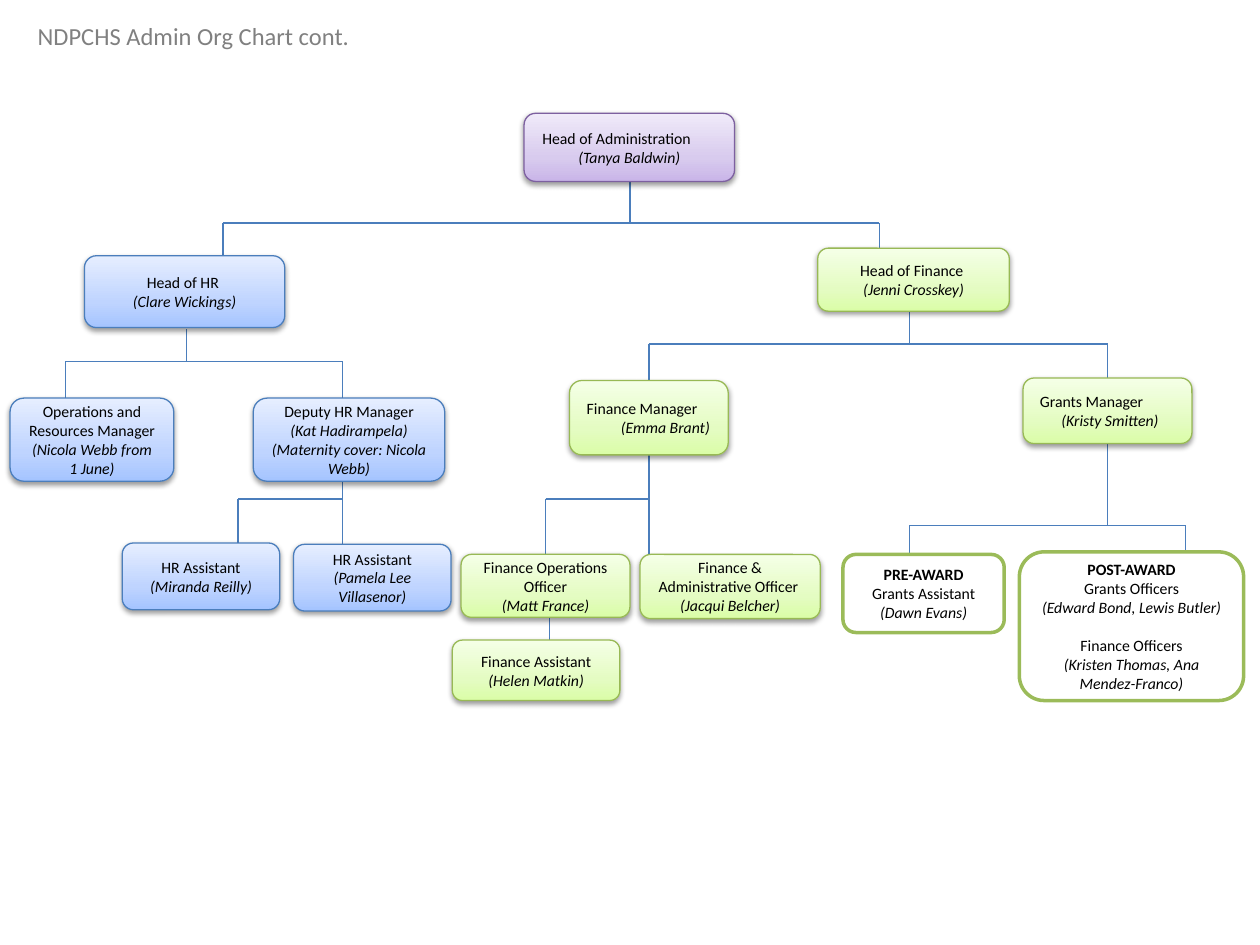
from copy import deepcopy
from pptx import Presentation
from pptx.dml.color import RGBColor
from pptx.enum.shapes import MSO_CONNECTOR, MSO_SHAPE
from pptx.enum.text import MSO_ANCHOR, PP_ALIGN
from pptx.oxml import parse_xml
from pptx.oxml.ns import nsdecls, qn
from pptx.util import Inches, Pt

TONES = {
    "purple": ("7D60A0", ("F0EAF9", "D8CBEE", "C9B5E8")),
    "blue": ("4B7EBC", ("E6EEFF", "BFD4FF", "A4C4FF")),
    "green": ("98B955", ("F5FFE7", "E4FCC2", "DAFDA7")),
}
WIRE = "4B7EBC"
SHADOW = (
    f'<a:effectLst {nsdecls("a")}><a:outerShdw blurRad="{Pt(3.1)}" dist="{Pt(1.6)}" '
    'dir="5400000" rotWithShape="0"><a:srgbClr val="000000"><a:alpha val="38000"/>'
    "</a:srgbClr></a:outerShdw></a:effectLst>"
)


def paint(code):
    """Turn a hex string into a colour."""
    return RGBColor.from_string(code)


def wire(slide, x1, y1, x2, y2):
    """Draw one thin line."""
    ends = [Inches(v) for v in (x1, y1, x2, y2)]
    line = slide.shapes.add_connector(MSO_CONNECTOR.STRAIGHT, *ends)
    line.line.color.rgb = paint(WIRE)
    line.line.width = Pt(0.75)
    line._element.spPr.append(parse_xml(f'<a:effectLst {nsdecls("a")}/>'))


def rail(slide, left, top, level, ends):
    """Draw a level rail with a vertical line to each end."""
    spots = [left + x for x, _ in ends]
    y = top + level
    if len(spots) > 1:
        wire(slide, min(spots), y, max(spots), y)
    for x, end in zip(spots, ends):
        wire(slide, x, y, x, top + end[1])


def shade(shape, codes):
    """Fill a shape from top to bottom with three colours and add a shadow."""
    shape.fill.gradient()
    shape.fill.gradient_angle = 270
    stops = shape._element.spPr.find(qn("a:gradFill")).find(qn("a:gsLst"))
    stops.append(deepcopy(stops[-1]))
    for stop, code, place in zip(shape.fill.gradient_stops, codes, (0, 0.65, 1)):
        stop.color.rgb = paint(code)
        stop.position = place


def card(slide, box, tone, lines, dents=(), gaps=None):
    """Place a rounded card with its job title and names."""
    shape = slide.shapes.add_shape(MSO_SHAPE.ROUNDED_RECTANGLE, *map(Inches, box))
    shape.shadow.inherit = False
    if tone in TONES:
        edge, codes = TONES[tone]
        shade(shape, codes)
        shape.line.width = Pt(0.75)
        props = shape._element.spPr
        props.replace(props.find(qn("a:effectLst")), parse_xml(SHADOW))
    else:
        edge = "9BBB59"
        shape.fill.solid()
        shape.fill.fore_color.rgb = paint("FFFFFF")
        shape.line.width = Pt(2)
    shape.line.color.rgb = paint(edge)
    frame = shape.text_frame
    frame.word_wrap = True
    frame.vertical_anchor = MSO_ANCHOR.MIDDLE
    for i, text in enumerate(lines):
        para = frame.paragraphs[0] if i == 0 else frame.add_paragraph()
        para.text = text
        para.alignment = PP_ALIGN.CENTER
        if i < len(dents):
            para.alignment = PP_ALIGN.LEFT
            para._p.get_or_add_pPr().set("marL", str(Inches(dents[i])))
        if gaps and i in gaps:
            para.space_before = Pt(gaps[i])
        font = para.font
        font.name, font.size = "Calibri", Pt(9)
        font.color.rgb = paint("000000")
        font.bold = text.isupper()
        font.italic = text.startswith("(")


def team(slide, left, top, tone, rails, cards):
    """Place one team's rails, then its cards, from a corner."""
    for level, ends in rails:
        rail(slide, left, top, level, ends)
    for (x, y, wide, high), lines, *rest in cards:
        card(slide, (left + x, top + y, wide, high), tone, lines, *rest)


def title(slide, box, text):
    """Place the slide title."""
    frame = slide.shapes.add_textbox(*map(Inches, box)).text_frame
    frame.word_wrap = True
    frame.vertical_anchor = MSO_ANCHOR.MIDDLE
    para = frame.paragraphs[0]
    para.text = text
    para.font.name, para.font.size = "Calibri", Pt(14)
    para.font.color.rgb = paint("808080")


def head(slide, left, top):
    """Place the head of administration."""
    team(slide, left, top, "purple",
         [(0.87, [(3.5, 0.42), (0.27, 1.13), (5.48, 1.12)])],
         [((2.66, 0, 1.67, 0.54),
           ["Head of Administration", "(Tanya Baldwin)"], (0.02,))])


def staff(slide, left, top):
    """Place the HR team."""
    team(slide, left, top, "blue",
         [(0.87, [(1.48, 0.61), (0.52, 1.36), (2.72, 1.96)]),
          (1.96, [(1.89, 2.47), (2.72, 2.71)])],
         [((0.67, 0.03, 1.59, 0.57), ["Head of HR ", "(Clare Wickings)"]),
          ((0.08, 1.16, 1.3, 0.66),
           ["Operations and Resources Manager", "(Nicola Webb from 1 June)"]),
          ((2.01, 1.16, 1.52, 0.66),
           ["Deputy HR Manager",
            "(Kat Hadirampela) (Maternity cover: Nicola Webb)"]),
          ((2.33, 2.32, 1.25, 0.53), ["HR Assistant", "(Pamela Lee Villasenor)"]),
          ((0.97, 2.31, 1.25, 0.53), ["HR Assistant", "(Miranda Reilly)"])])


def money(slide, left, top):
    """Place the finance team."""
    team(slide, left, top, "green",
         [(0.83, [(3.72, 0.57), (1.65, 2.06), (5.29, 1.1)]),
          (2.06, [(1.65, 2.54), (0.83, 2.58)]),
          (2.95, [(0.86, 3.28)])],
         [((2.99, 0.07, 1.52, 0.5), ["Head of Finance ", "(Jenni Crosskey)"]),
          ((1.02, 1.12, 1.26, 0.59),
           ["Finance Manager", "(Emma Brant)"], (0.01, 0.28)),
          ((1.58, 2.5, 1.43, 0.51),
           ["Finance & Administrative Officer ", "(Jacqui Belcher)"]),
          ((0.16, 2.5, 1.34, 0.5),
           ["Finance Operations Officer", "(Matt France)"]),
          ((0.09, 3.18, 1.33, 0.48), ["Finance Assistant", "(Helen Matkin)"])])


def grants(slide, left, top):
    """Place the grants team."""
    team(slide, left, top, "green",
         [(1.17, [(2.29, 0.52), (0.72, 1.51), (2.91, 1.44)])],
         [((1.62, 0, 1.34, 0.52),
           ["Grants Manager", "(Kristy Smitten)"], (0.01, 0.18))])
    team(slide, left, top, "plain", [],
         [((1.59, 1.38, 1.78, 1.18),
           ["POST-AWARD", "Grants Officers", "(Edward Bond, Lewis Butler)",
            "Finance Officers", "(Kristen Thomas, Ana Mendez-Franco)"],
           (), {3: 11}),
          ((0.19, 1.4, 1.28, 0.62),
           ["PRE-AWARD", "Grants Assistant", "(Dawn Evans)"])])


def main():
    """Build and save the slide."""
    deck = Presentation()
    deck.slide_width, deck.slide_height = Inches(10), Inches(7.5)
    slide = deck.slides.add_slide(deck.slide_layouts[6])
    title(slide, (0.2, 0, 6.19, 0.57), "NDPCHS Admin Org Chart cont.")
    head(slide, 1.5, 0.9)
    staff(slide, 0, 2)
    money(slide, 3.5, 1.9)
    grants(slide, 6.5, 3)
    deck.save("out.pptx")


if __name__ == "__main__":
    main()
